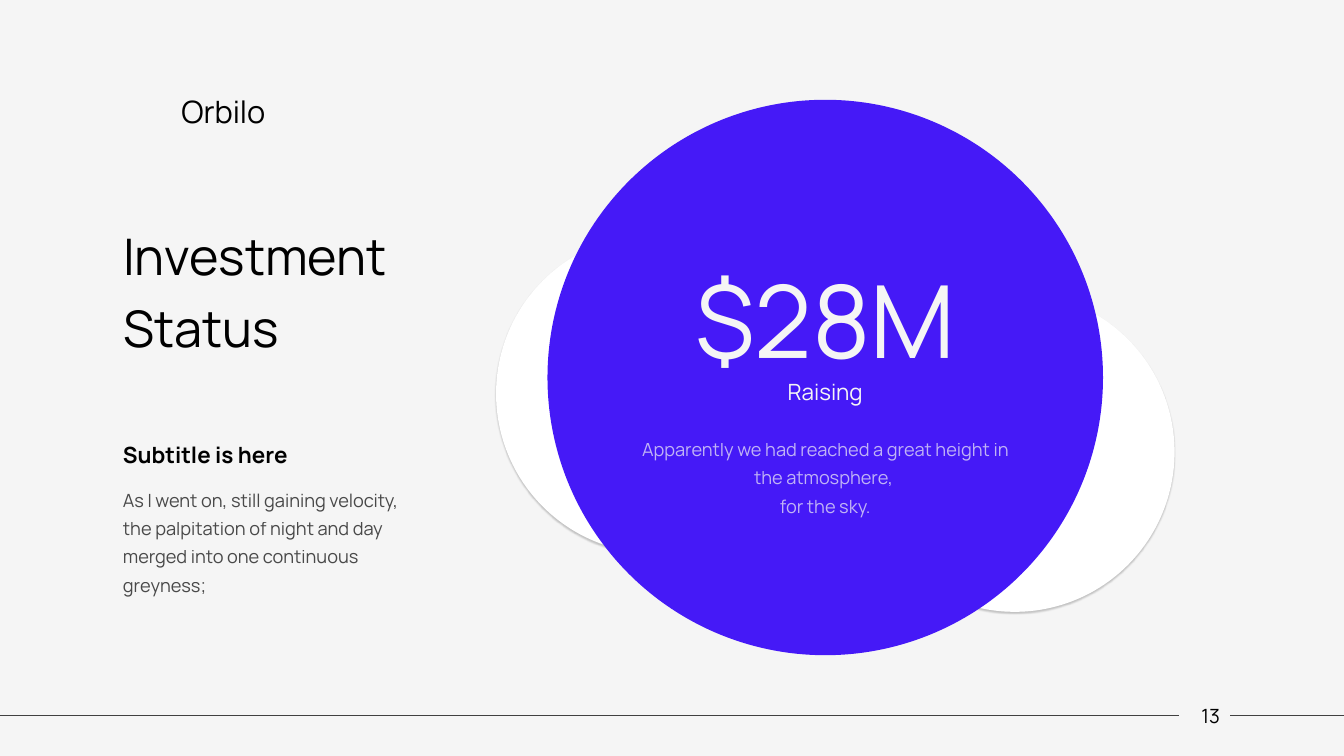
from lxml import etree
from pptx import Presentation
from pptx.enum import shapes, text
from pptx.dml.color import RGBColor
from pptx.oxml import parse_xml
from pptx.oxml.ns import nsdecls, qn
from pptx.util import Inches, Pt

COLORS = {"paper": "F5F5F5", "ink": "000000", "rule": "404040",
          "accent": "4519F7", "white": "FFFFFF"}
FONT = "Manrope"

# Paragraph: text, size, then optional settings
TITLE = [("Investment\nStatus", 36, {"spacing": 1.2})]
BRAND = [("Orbilo", 22, {})]
PAGE = [("13", 14, {"align": text.PP_ALIGN.RIGHT})]
BODY = [
    ("Subtitle is here", 16, {"spacing": 1.3, "bold": True}),
    ("As I went on, still gaining velocity, the palpitation of night and day "
     "merged into one continuous greyness;", 13,
     {"spacing": 1.3, "before": 10, "alpha": 70}),
]
CENTER = text.PP_ALIGN.CENTER
RAISING = [
    ("$28M", 72, {"align": CENTER}),
    ("Raising", 16, {"align": CENTER}),
    ("Apparently we had reached a great height in the atmosphere, \nfor the sky.", 13,
     {"align": CENTER, "spacing": 1.3, "before": 19, "alpha": 70}),
]

# Left, top, diameter
SIDE_CIRCLES = [(8.48, 2.9, 3.17), (4.92, 2.32, 3.17)]
MAIN_CIRCLE = (5.43, 0.99, 5.51)
LEFT = 1.22
FOOTER_Y = 7.1
FOOTER_LINES = [(0, 11.69), (12.2, 13.33)]


def rgb(name):
    return RGBColor.from_string(COLORS[name])


def write(sp, paragraphs, color="ink", margins=(0, 0, 0, 0),
          anchor=text.MSO_ANCHOR.TOP, wrap=True):
    tf = sp.text_frame
    tf.word_wrap = wrap
    tf.auto_size = text.MSO_AUTO_SIZE.NONE
    tf.vertical_anchor = anchor
    tf.margin_left, tf.margin_top, tf.margin_right, tf.margin_bottom = map(Inches, margins)
    for i, (words, size, style) in enumerate(paragraphs):
        p = tf.add_paragraph() if i else tf.paragraphs[0]
        p.text = words
        p.alignment = style.get("align", text.PP_ALIGN.LEFT)
        p.line_spacing = style.get("spacing", 1.0)
        p.space_before = Pt(style.get("before", 0))
        p.font.name, p.font.size = FONT, Pt(size)
        p.font.bold = style.get("bold", False)
        p.font.color.rgb = rgb(color)
        if "alpha" in style:
            for clr in p._p.iter(qn("a:srgbClr")):
                etree.SubElement(clr, qn("a:alpha"), val=str(style["alpha"] * 1000))


def add_text(slide, box, paragraphs, **options):
    write(slide.shapes.add_textbox(*map(Inches, box)), paragraphs, **options)


def add_circle(slide, left, top, size, fill):
    sp = slide.shapes.add_shape(shapes.MSO_SHAPE.OVAL, *map(Inches, (left, top, size, size)))
    sp.shadow.inherit = False
    sp.fill.solid()
    sp.fill.fore_color.rgb = rgb(fill)
    sp.line.fill.background()
    return sp


def add_soft_shadow(sp):
    effects = sp._element.spPr.find(qn("a:effectLst"))
    effects.append(parse_xml(
        f'<a:outerShdw {nsdecls("a")} blurRad="{Pt(1)}" dist="{Pt(1)}" dir="5400000" '
        f'algn="t" rotWithShape="0"><a:srgbClr val="{COLORS["ink"]}">'
        '<a:alpha val="20000"/></a:srgbClr></a:outerShdw>'))


def add_footer_line(slide, start, end):
    line = slide.shapes.add_connector(
        shapes.MSO_CONNECTOR.STRAIGHT, *map(Inches, (start, FOOTER_Y, end, FOOTER_Y)))
    line.line.color.rgb = rgb("rule")
    line.line.width = Pt(0.5)
    etree.SubElement(line._element.spPr, qn("a:effectLst"))


def main():
    prs = Presentation()
    prs.slide_width, prs.slide_height = Inches(13.33), Inches(7.5)
    slide = prs.slides.add_slide(prs.slide_layouts[5])
    slide.background.fill.solid()
    slide.background.fill.fore_color.rgb = rgb("paper")

    add_text(slide, (1.7, 0.87, 1.13, 0.47), BRAND,
             margins=(0.1, 0.05, 0.1, 0.05), wrap=False)
    for start, end in FOOTER_LINES:
        add_footer_line(slide, start, end)

    title = slide.shapes.title
    title.left, title.top, title.width, title.height = map(Inches, (LEFT, 2.11, 5.09, 1.64))
    write(title, TITLE)
    add_text(slide, (11.66, 6.9, 0.44, 0.4), PAGE, anchor=text.MSO_ANCHOR.MIDDLE)
    add_text(slide, (LEFT, 4.3, 2.93, 1.61), BODY)

    for circle in SIDE_CIRCLES:
        add_soft_shadow(add_circle(slide, *circle, "white"))
    write(add_circle(slide, *MAIN_CIRCLE, "accent"), RAISING, color="paper",
          margins=(0.1, 0.24, 0.1, 0.05), anchor=text.MSO_ANCHOR.MIDDLE)
    prs.save("out.pptx")


if __name__ == "__main__":
    main()
